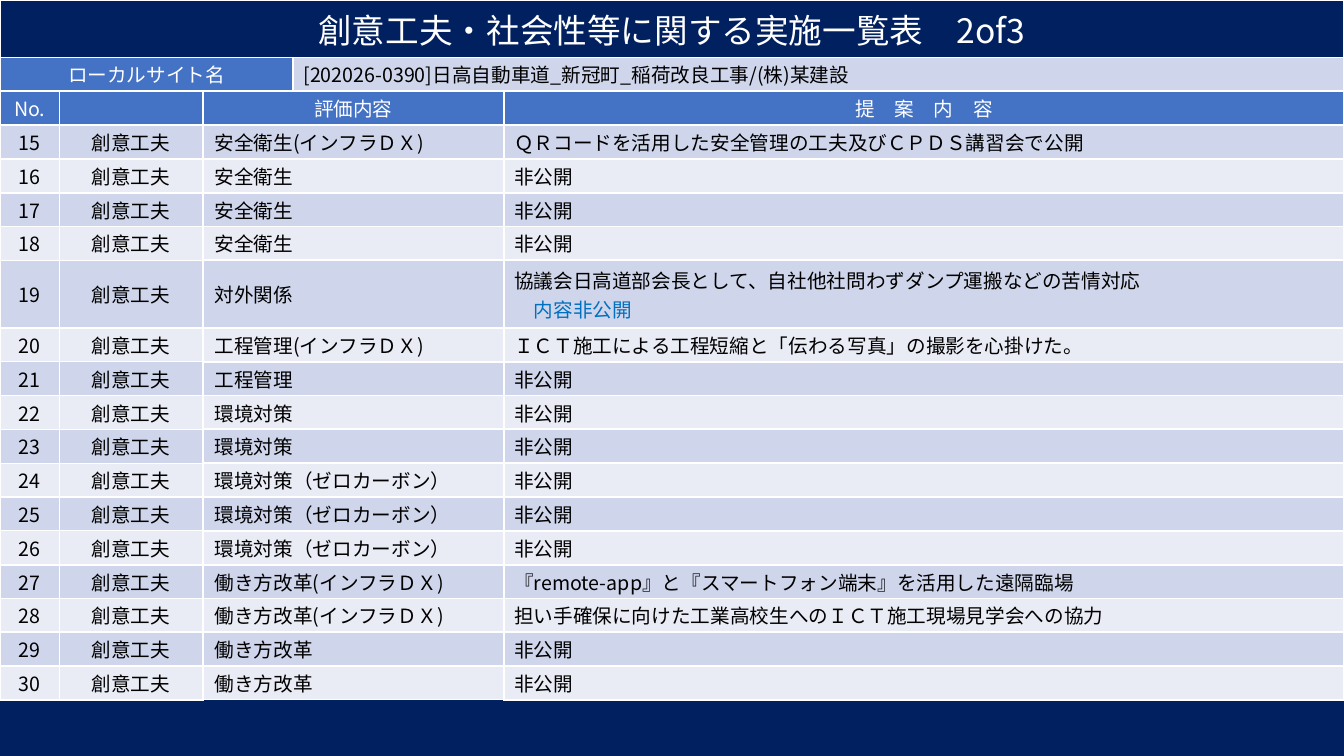
from lxml import etree
from pptx import Presentation
from pptx import util as u
from pptx.dml.color import RGBColor
from pptx.enum import text
from pptx.oxml.ns import qn

NAVY = RGBColor(0x00, 0x20, 0x60)
BLUE = RGBColor(0x44, 0x72, 0xC4)
NOTE_BLUE = RGBColor(0x00, 0x70, 0xC0)
DARK_BAND = RGBColor(0xCF, 0xD5, 0xEA)
LIGHT_BAND = RGBColor(0xE9, 0xEB, 0xF5)
WHITE = RGBColor(0xFF, 0xFF, 0xFF)
BLACK = RGBColor(0x00, 0x00, 0x00)

FIRST_NUMBER = 15
CATEGORY = "創意工夫"
CLOSED = "非公開"
PROPOSALS = [
    ("安全衛生(インフラＤＸ)", "ＱＲコードを活用した安全管理の工夫及びＣＰＤＳ講習会で公開"),
    ("安全衛生", CLOSED),
    ("安全衛生", CLOSED),
    ("安全衛生", CLOSED),
    ("対外関係", "協議会日高道部会長として、自社他社問わずダンプ運搬などの苦情対応\n　内容非公開"),
    ("工程管理(インフラＤＸ)", "ＩＣＴ施工による工程短縮と「伝わる写真」の撮影を心掛けた。"),
    ("工程管理", CLOSED),
    ("環境対策", CLOSED),
    ("環境対策", CLOSED),
    ("環境対策（ゼロカーボン）", CLOSED),
    ("環境対策（ゼロカーボン）", CLOSED),
    ("環境対策（ゼロカーボン）", CLOSED),
    ("働き方改革(インフラＤＸ)", "『remote-app』と『スマートフォン端末』を活用した遠隔臨場"),
    ("働き方改革(インフラＤＸ)", "担い手確保に向けた工業高校生へのＩＣＴ施工現場見学会への協力"),
    ("働き方改革", CLOSED),
    ("働き方改革", CLOSED),
]

COLUMN_WIDTHS = [0.59, 1.42, 0.9, 2.09, 8.33]
TITLE_HEIGHT = 0.57
TABLE_HEIGHT = 6.95


class ProposalPage:
    font_name = "Noto Sans CJK JP"

    def __init__(self, deck):
        self.page = deck.slides.add_slide(deck.slide_layouts[6])
        fill = self.page.background.fill
        fill.solid()
        fill.fore_color.rgb = NAVY

    def add_grid(self, widths, heights):
        frame = self.page.shapes.add_table(
            len(heights), len(widths), 0, 0,
            u.Inches(sum(widths)), u.Inches(sum(heights)))
        self.table = frame.table
        self.table.first_row = False
        self.table.horz_banding = False
        for column, width in zip(self.table.columns, widths):
            column.width = u.Inches(width)
        for row, height in zip(self.table.rows, heights):
            row.height = u.Inches(height)

    def style_font(self, para, size, color):
        font = para.font
        font.size = u.Pt(size)
        font.color.rgb = color
        font.name = self.font_name
        # East Asian letters need their own typeface entry
        etree.SubElement(font._rPr, qn("a:ea"), typeface=self.font_name)

    def paint(self, cell, fill, thin):
        """Draw white borders, 1 pt on the thin sides, then fill."""
        properties = cell._tc.get_or_add_tcPr()
        for side in "LRTB":
            width = u.Pt(1 if side in thin else 1.5)
            line = etree.SubElement(properties, qn("a:ln" + side), w=str(width))
            solid = etree.SubElement(line, qn("a:solidFill"))
            etree.SubElement(solid, qn("a:srgbClr"), val=str(WHITE))
        cell.fill.solid()
        cell.fill.fore_color.rgb = fill

    def add_cell(self, row, column, words, fill, color=BLACK, size=14, span=1,
                 centred=False, left=0.1, thin=""):
        cell = self.table.cell(row, column)
        if span > 1:
            cell.merge(self.table.cell(row, column + span - 1))
        for offset in range(span):
            self.paint(self.table.cell(row, column + offset), fill, thin)
        cell.vertical_anchor = text.MSO_ANCHOR.MIDDLE
        cell.margin_left, cell.margin_right = u.Inches(left), u.Inches(0.1)
        cell.margin_top = cell.margin_bottom = 0
        cell.text = words
        for index, para in enumerate(cell.text_frame.paragraphs):
            para.alignment = text.PP_ALIGN.CENTER if centred else text.PP_ALIGN.LEFT
            self.style_font(para, size, NOTE_BLUE if index else color)
            if not words:
                para._p.get_or_add_endParaRPr().set("sz", str(size * 100))

    def add_heading(self, row, column, words, fill=BLUE, **options):
        self.add_cell(row, column, words, fill, WHITE, centred=True, **options)


def main():
    deck = Presentation()
    deck.slide_width, deck.slide_height = u.Inches(13.33), u.Inches(7.5)
    page = ProposalPage(deck)

    # Grid: a title row, then rows sized by their number of lines
    lines = [1, 1] + [proposal.count("\n") + 1 for _, proposal in PROPOSALS]
    line_height = (TABLE_HEIGHT - TITLE_HEIGHT) / sum(lines)
    page.add_grid(COLUMN_WIDTHS,
                  [TITLE_HEIGHT] + [line_height * count for count in lines])

    # Title and site name
    page.add_heading(0, 0, "創意工夫・社会性等に関する実施一覧表　2of3",
                     fill=NAVY, size=24, span=5, thin="LTR")
    page.add_heading(1, 0, "ローカルサイト名", span=3)
    page.add_cell(1, 3, "[202026-0390]日高自動車道_新冠町_稲荷改良工事/(株)某建設",
                  DARK_BAND, span=2, thin="TR")

    # Column headings
    page.add_heading(2, 0, "No.")
    page.add_heading(2, 1, "")
    page.add_heading(2, 2, "評価内容", span=2, thin="T")
    page.add_heading(2, 4, "提　案　内　容", thin="T")

    # Proposals; numbers 18 to 26 are parted by thin rules on the left
    subject_thin = {17: "B", 18: "T", 30: "B"}
    for index, (subject, proposal) in enumerate(PROPOSALS):
        row, number = index + 3, index + FIRST_NUMBER
        band = LIGHT_BAND if index % 2 else DARK_BAND
        thin = ("T" if 19 <= number <= 26 else "") + ("B" if 18 <= number <= 25 else "")
        page.add_cell(row, 0, str(number), band, centred=True, thin=thin)
        page.add_cell(row, 1, CATEGORY, band, centred=True, thin=thin)
        page.add_cell(row, 2, subject, band, span=2, left=0.12,
                      thin=subject_thin.get(number, ""))
        page.add_cell(row, 4, proposal, band)

    deck.save("out.pptx")


if __name__ == "__main__":
    main()
